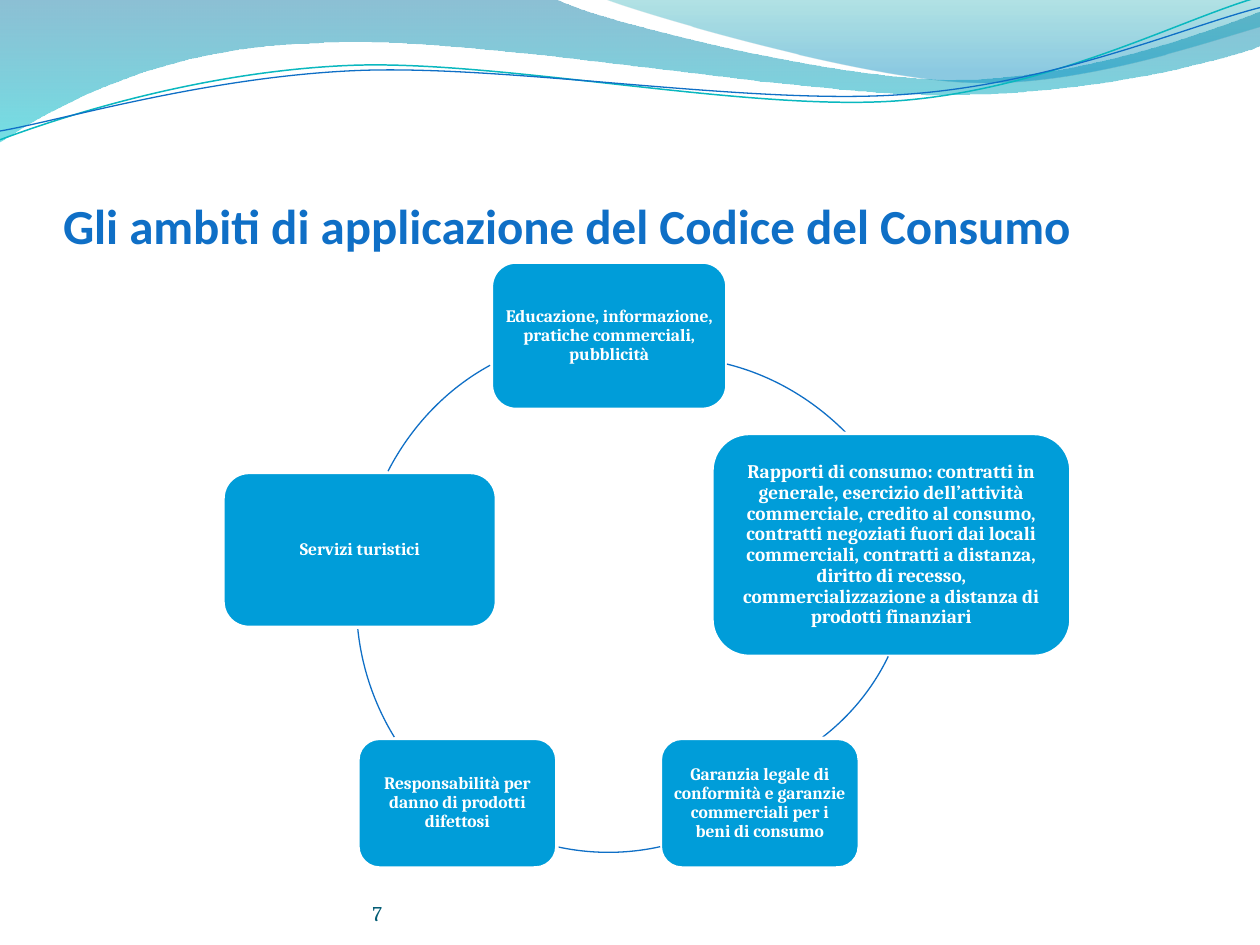
from math import cos, radians, sin

from lxml.etree import SubElement
from pptx import Presentation
from pptx.dml.color import RGBColor
from pptx.enum.shapes import MSO_SHAPE
from pptx.enum.text import MSO_ANCHOR, PP_ALIGN
from pptx.oxml.ns import qn
from pptx.util import Inches, Pt

WIDE, HIGH = Inches(10), Inches(7.5)
COLS, ROWS = 100, 75
TILT = 357.3
RING = 41

WHITE = RGBColor(0xFF, 0xFF, 0xFF)
BLUE = RGBColor(0x0F, 0x6F, 0xC6)
SKY = RGBColor(0x00, 0x9D, 0xD9)
TEAL = RGBColor(0x0A, 0xB8, 0xBF)
DEEP = RGBColor(0x00, 0x74, 0xA1)
AQUA = RGBColor(0x00, 0xC6, 0xCF)
GREEN = RGBColor(0x00, 0xA1, 0xA9)
AZURE = RGBColor(0x00, 0x8B, 0xBF)
SLATE = RGBColor(0x04, 0x5D, 0x75)

WAVES = [
    ((-0.1, -0.1, 100.2, 11.4),
     [(0, 0), (44, -0.1), (47.6, 1.7, 66.4, 6.3, 75.8, 6.3),
      (85.3, 6.3, 95.8, 2.6, 100, 0.9), (100.1, 3.6),
      (98.3, 4.4, 87, 7.6, 74.6, 7.5), (62.2, 7.5, 38.2, 2.8, 25.7, 3.4),
      (12.9, 3.6, 4.6, 8.3, -0.1, 11.3), (0, 0)],
     [(0, DEEP, 45), (1, AQUA, 55)]),
    ((47.9, -0.1, 52.1, 7),
     [(47.9, -0.1), (50.9, 1.1, 68.2, 6.2, 76.9, 6.5),
      (85.6, 6.9, 96.1, 3.2, 100, 2.1), (100, 0), (47.9, -0.1)],
     [(0, GREEN, 30), (0.8, AZURE, 45)]),
]
LINES = [
    ((-0.2, 2.2, 100.2, 7.1),
     [(0, 11.1), (4.8, 9.3, 15.8, 5.7, 27.7, 5.2),
      (39.5, 4.7, 59.3, 8.9, 71.3, 8), (83.3, 7.1, 93.8, 1.5, 99.8, -0.2)],
     TEAL, 0.85),
    ((-0.2, 3, 100.3, 5.8),
     [(0, 10.4), (4.7, 9.6, 16.4, 6.1, 28.3, 5.6),
      (40.3, 5.1, 59.7, 8.4, 71.7, 7.5), (83.6, 6.7, 94.1, 2.1, 100, 0.6)],
     BLUE, 0.75),
]
ARCS = [
    ((32.2, 28.3), [(57.7, 28.9), (61.3, 29.8, 64.5, 31.7, 67.1, 34.3)]),
    ((31.9, 22.2), [(70.5, 52.1), (69.3, 54.6, 67.5, 56.8, 65.3, 58.5)]),
    ((27.8, 26.7), [(52.4, 67.2), (49.7, 67.8, 46.9, 67.8, 44.2, 67.2)]),
    ((28.3, 27.5), [(31.3, 58.5), (29.7, 55.9, 28.7, 52.9, 28.4, 49.9)]),
    ((28.5, 26.3), [(30.8, 37.4), (32.6, 33.9, 35.4, 30.9, 38.9, 29)]),
]
NODES = [
    ((39, 20.8, 18.7, 11.7), 10,
     "Educazione, informazione, pratiche commerciali, pubblicità"),
    ((56.5, 34.4, 28.5, 17.7), 11,
     "Rapporti di consumo: contratti in generale, esercizio dell’attività "
     "commerciale, credito al consumo, contratti negoziati fuori dai locali "
     "commerciali, contratti a distanza, diritto di recesso, "
     "commercializzazione a distanza di prodotti finanziari"),
    ((52.4, 58.6, 15.8, 10.3), 10,
     "Garanzia legale di conformità e garanzie commerciali per i beni di consumo"),
    ((28.4, 58.6, 15.8, 10.3), 10,
     "Responsabilità per danno di prodotti difettosi"),
    ((17.7, 37.5, 21.7, 12.3), 10, "Servizi turistici"),
]


def col(n):
    return round(WIDE * n / COLS)


def row(n):
    return round(HIGH * n / ROWS)


def area(box):
    left, top, wide, high = box
    return col(left), row(top), col(wide), row(high)


def write(shape, text, size, color, font="Cambria", bold=False,
          align=PP_ALIGN.LEFT, anchor=MSO_ANCHOR.BOTTOM, pad=(0, 0, 0, 0), space=1.0):
    frame = shape.text_frame
    frame.word_wrap = True
    frame.vertical_anchor = anchor
    frame.margin_left, frame.margin_top = col(pad[0]), row(pad[1])
    frame.margin_right, frame.margin_bottom = col(pad[2]), row(pad[3])
    para = frame.paragraphs[0]
    para.alignment = align
    para.line_spacing = space
    run = para.add_run()
    run.text = text
    run.font.name, run.font.size = font, Pt(size)
    run.font.bold, run.font.color.rgb = bold, color


def local(box, x, y, turn):
    left, top, wide, high = box
    a = radians(-turn)
    dx, dy = x - left - wide / 2, y - top - high / 2
    return (col(dx * cos(a) - dy * sin(a) + wide / 2),
            row(dx * sin(a) + dy * cos(a) + high / 2))


def outline(slide, box, points, turn=0, close=False):
    left, top, wide, high = area(box)
    pen = slide.shapes.build_freeform(left, top)
    pen.add_line_segments([(left + wide, top + high)], close=close)
    shape = pen.convert_to_shape()
    shape.shadow.inherit = False
    shape.rotation = turn
    track = next(shape._element.iter(qn("a:path")))
    for child in list(track):
        track.remove(child)
    for i, part in enumerate(points):
        kind = "a:moveTo" if i == 0 else "a:lnTo" if len(part) == 2 else "a:cubicBezTo"
        move = SubElement(track, qn(kind))
        for pair in zip(part[::2], part[1::2]):
            x, y = local(box, *pair, turn)
            spot = SubElement(move, qn("a:pt"))
            spot.set("x", str(x))
            spot.set("y", str(y))
    if close:
        SubElement(track, qn("a:close"))
    return shape


def stroke(slide, box, points, color, width, turn=0):
    shape = outline(slide, box, points, turn)
    shape.fill.background()
    shape.line.color.rgb, shape.line.width = color, Pt(width)


def wave(slide, box, points, stops):
    shape = outline(slide, box, points, close=True)
    shape.line.fill.background()
    shape.fill.gradient()
    shape.fill.gradient_angle = 270
    for stop, (place, color, _) in zip(shape.fill.gradient_stops, stops):
        stop.position, stop.color.rgb = place, color
    for tint, (_, _, alpha) in zip(shape._element.iter(qn("a:srgbClr")), stops):
        SubElement(tint, qn("a:alpha")).set("val", str(alpha * 1000))


def header(slide):
    for item in WAVES:
        wave(slide, *item)
    for item in LINES:
        stroke(slide, *item, turn=TILT)


def title(slide, box, text):
    shape = slide.shapes.title
    shape.left, shape.top, shape.width, shape.height = area(box)
    write(shape, text, 28, BLUE, font="Calibri", bold=True, pad=(0, 0.5, 0, 0))


def node(slide, box, size, text):
    shape = slide.shapes.add_shape(MSO_SHAPE.ROUNDED_RECTANGLE, *area(box))
    shape.shadow.inherit = False
    shape.fill.solid()
    shape.fill.fore_color.rgb = SKY
    shape.line.color.rgb, shape.line.width = WHITE, Pt(2)
    write(shape, text, size, WHITE, bold=True, align=PP_ALIGN.CENTER,
          anchor=MSO_ANCHOR.MIDDLE, pad=[size / 23] * 4, space=0.9)


def cycle(slide):
    for item, (corner, arc) in zip(NODES, ARCS):
        node(slide, *item)
        stroke(slide, (*corner, RING, RING), arc, BLUE, 0.75)


def number(slide, box, text):
    shape = slide.shapes.add_textbox(*area(box))
    write(shape, text, 12, SLATE, pad=(0.35, 0, 0, 0))


def main():
    deck = Presentation()
    deck.slide_width, deck.slide_height = WIDE, HIGH
    slide = deck.slides.add_slide(deck.slide_layouts[5])
    header(slide)
    title(slide, (5, 7.7, 90, 12.5), "Gli ambiti di applicazione del Codice del Consumo")
    cycle(slide)
    number(slide, (29.2, 69.5, 36.7, 4), "7")
    deck.save("out.pptx")


if __name__ == "__main__":
    main()
